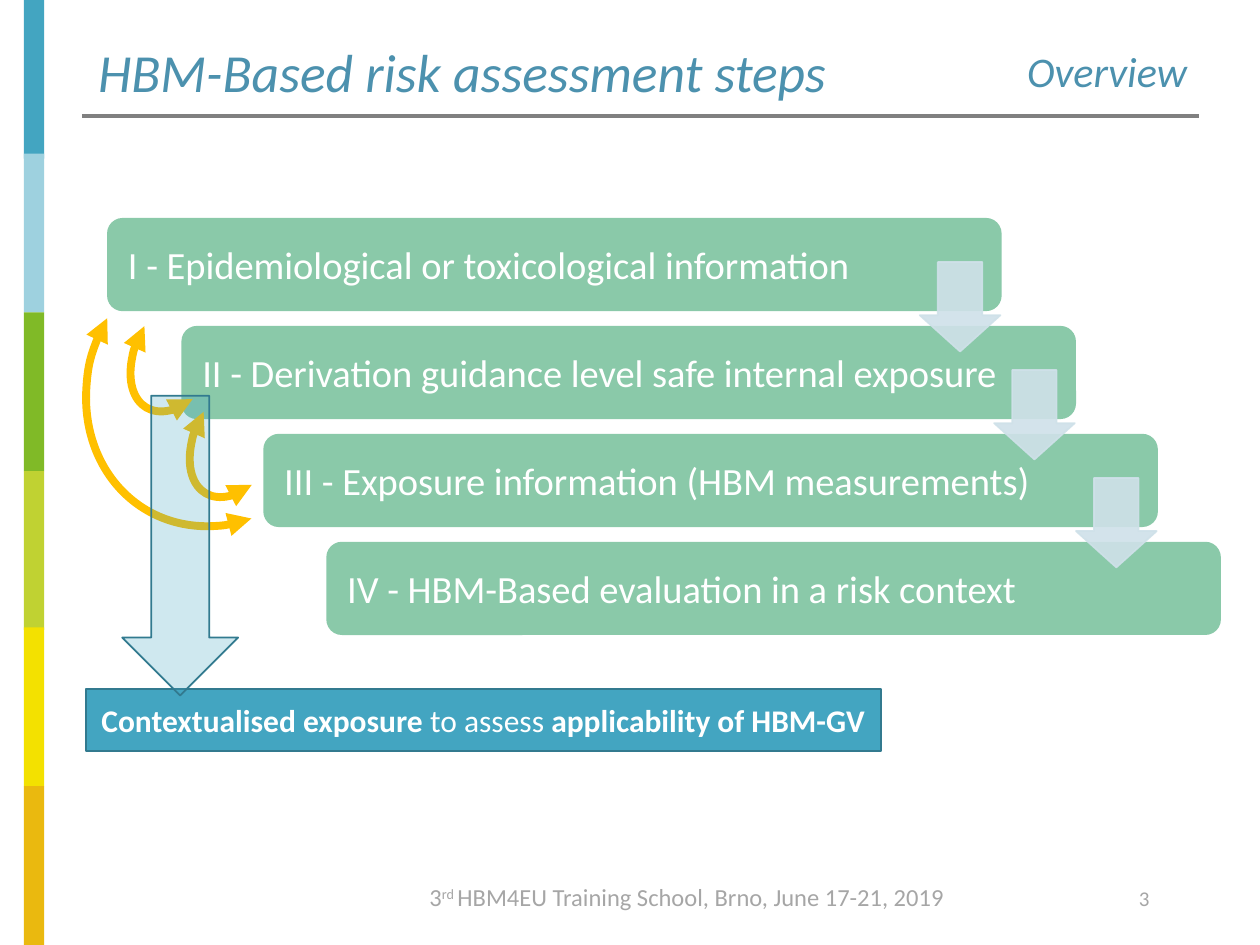
from lxml.etree import SubElement
from pptx import Presentation
from pptx.dml.color import RGBColor
from pptx.enum.shapes import MSO_CONNECTOR, MSO_SHAPE
from pptx.enum.text import MSO_ANCHOR, PP_ALIGN
from pptx.oxml.ns import qn
from pptx.util import Inches, Pt

COLORS = {
    "teal": "43A5C1", "sky": "9ED1DF", "green": "80BA27", "lime": "C0D232",
    "yellow": "F3E100", "amber": "EAB90F", "rule": "808080", "edge": "327A8F",
    "step": "8AC9A9", "step_arrow": "CFE1E9", "feedback": "FFC000",
    "heading": "4C91AE", "footer": "A6A6A6", "white": "FFFFFF",
}
STRIPES = [("teal", 0), ("sky", 1.22), ("green", 2.48), ("lime", 3.74), ("yellow", 4.98), ("amber", 6.24)]
STEPS = [
    ("I - Epidemiological or toxicological information", 0),
    ("II - Derivation guidance level safe internal exposure", 0.59),
    ("III - Exposure information (HBM measurements)", 1.24),
    ("IV - HBM-Based evaluation in a risk context", 1.74),
]
FEEDBACK_ARCS = [
    ((0, 0, 2.08, 2.36), 215.24),
    ((0.38, 0.36, 0.68, 1.1), 0),
    ((0.85, 1.04, 0.68, 1.1), 0),
]


def color(name):
    """Return the named colour as an RGBColor."""
    return RGBColor.from_string(COLORS[name])


def set_alpha(fill_element, percent):
    """Make every solid colour below an element partly opaque."""
    for rgb in fill_element.iter(qn("a:srgbClr")):
        SubElement(rgb, qn("a:alpha")).set("val", str(percent * 1000))


def add_shape(slide, kind, box, fill=None, line=None, width=1, adjustments=()):
    """Add a flat preset shape with the given fill and line."""
    shape = slide.shapes.add_shape(kind, *map(Inches, box))
    shape.shadow.inherit = False
    for index, value in enumerate(adjustments):
        shape.adjustments[index] = value
    for part, name in ((shape.fill, fill), (shape.line.fill, line)):
        if name:
            part.solid()
            part.fore_color.rgb = color(name)
        else:
            part.background()
    if line:
        shape.line.width = Pt(width)
    return shape


def write_text(shape, runs, font, frame=None, paragraph_format=None):
    """Write one paragraph of (text, font overrides) runs into a shape."""
    text_frame = shape.text_frame
    paragraph = text_frame.paragraphs[0]
    frame_values = {"word_wrap": True, **(frame or {})}
    paragraph_values = {"alignment": PP_ALIGN.LEFT, **(paragraph_format or {})}
    for target, values in ((text_frame, frame_values), (paragraph, paragraph_values)):
        for name, value in values.items():
            setattr(target, name, value)
    for text, overrides in runs:
        run = paragraph.add_run()
        run.text = text
        values = {"name": "Calibri", **font, **overrides}
        run.font.color.rgb = color(values.pop("color"))
        baseline = values.pop("baseline", None)
        for name, value in values.items():
            setattr(run.font, name, value)
        if baseline:
            run._r.get_or_add_rPr().set("baseline", baseline)


def add_text(slide, box, runs, font, frame=None, paragraph_format=None):
    """Add a text box holding one paragraph."""
    text_box = slide.shapes.add_textbox(*map(Inches, box))
    write_text(text_box, runs, font, frame, paragraph_format)


def add_stripes(slide, left, top, width, height):
    """Stack the coloured stripes down the slide edge."""
    for name, offset in STRIPES:
        stripe_height = min(1.26, height - offset)
        add_shape(slide, MSO_SHAPE.RECTANGLE, (left, top + offset, width, stripe_height), name)


def add_header(slide, left, top, width, height):
    """Place the title, the section name and the rule below them."""
    rule_top = Inches(top + height + 0.1)
    rule = slide.shapes.add_connector(
        MSO_CONNECTOR.STRAIGHT, Inches(left), rule_top, Inches(left + width), rule_top)
    rule.line.color.rgb = color("rule")
    rule.line.width = Pt(2)
    SubElement(rule._element.spPr, qn("a:effectLst"))
    font = {"italic": True, "color": "heading"}
    frame = {"vertical_anchor": MSO_ANCHOR.MIDDLE}
    add_text(slide, (left + width - 3.71, top, 3.71, height), [("Overview", {})],
             {**font, "size": Pt(24.1)}, frame,
             {"alignment": PP_ALIGN.RIGHT, "line_spacing": 0.8})
    add_text(slide, (left + 0.03, top, 6.23, height), [("HBM-Based risk assessment steps", {})],
             {**font, "size": Pt(30.6)}, frame, {"line_spacing": 0.9})


def add_steps(slide, left, top, width, height):
    """Cascade the step bars and link each one to the next."""
    bar_width, bar_height = width - STEPS[-1][1], 0.74
    pitch = (height - bar_height) / (len(STEPS) - 1)
    places = [(text, left + indent, top + index * pitch)
              for index, (text, indent) in enumerate(STEPS)]
    for text, bar_left, bar_top in reversed(places):
        bar = add_shape(slide, MSO_SHAPE.ROUNDED_RECTANGLE,
                        (bar_left, bar_top, bar_width, bar_height), "step")
        write_text(bar, [(text, {})], {"size": Pt(22), "color": "white"},
                   {"vertical_anchor": MSO_ANCHOR.MIDDLE, "margin_left": Inches(0.13)})
    for _, bar_left, bar_top in places[:-1]:
        arrow = add_shape(slide, MSO_SHAPE.DOWN_ARROW,
                          (bar_left + 6.45, bar_top + 0.35, 0.64, 0.71),
                          "step_arrow", "step_arrow", adjustments=(0.55, 0.45))
        set_alpha(arrow._element.spPr, 90)


def add_feedback(slide, left, top):
    """Draw the double-headed arcs between the steps."""
    for (x, y, width, height), end in FEEDBACK_ARCS:
        arc = add_shape(slide, MSO_SHAPE.ARC, (left + x, top + y, width, height),
                        line="feedback", width=4.5, adjustments=(136.48, end))
        arc.rotation = 210.3
        line = arc._element.spPr.find(qn("a:ln"))
        for tag in ("a:headEnd", "a:tailEnd"):
            SubElement(line, qn(tag)).set("type", "triangle")


def add_conclusion(slide, left, top, width, height):
    """Place the concluding box."""
    box = add_shape(slide, MSO_SHAPE.RECTANGLE, (left, top, width, height), "teal", "edge")
    runs = [("Contextualised exposure ", {"bold": True}), ("to assess ", {}),
            ("applicability of HBM-GV", {"bold": True})]
    write_text(box, runs, {"size": Pt(18), "color": "white"},
               {"vertical_anchor": MSO_ANCHOR.MIDDLE, "word_wrap": False},
               {"alignment": PP_ALIGN.CENTER})


def add_conclusion_arrow(slide, left, top, width, height):
    """Draw the translucent arrow down to the concluding box."""
    arrow = add_shape(slide, MSO_SHAPE.DOWN_ARROW, (left, top, width, height), "teal", "edge")
    set_alpha(arrow._element.spPr.find(qn("a:solidFill")), 25)


def add_footer(slide, left, top, width, height):
    """Place the event line and the slide number."""
    runs = [("3", {}), ("rd ", {"baseline": "30000"}),
            ("HBM4EU Training School, Brno, June 17-21, 2019", {})]
    add_text(slide, (left, top, 5.06, height), runs, {"size": Pt(14), "color": "footer"})
    add_text(slide, (left + width - 0.55, top + 0.03, 0.55, height), [("3", {})],
             {"size": Pt(12), "color": "footer"})


def main():
    """Build the slide and save it."""
    presentation = Presentation()
    presentation.slide_width, presentation.slide_height = Inches(10), Inches(7.5)
    slide = presentation.slides.add_slide(presentation.slide_layouts[6])
    add_stripes(slide, 0.19, 0, 0.16, 7.5)
    add_header(slide, 0.65, 0.38, 8.87, 0.44)
    add_conclusion(slide, 0.68, 5.47, 6.31, 0.49)
    add_steps(slide, 0.85, 1.73, 8.84, 3.31)
    add_footer(slide, 3.31, 6.95, 6.18, 0.4)
    add_feedback(slide, 0.72, 1.85)
    add_conclusion_arrow(slide, 0.97, 3.14, 0.92, 2.38)
    presentation.save("out.pptx")


if __name__ == "__main__":
    main()
